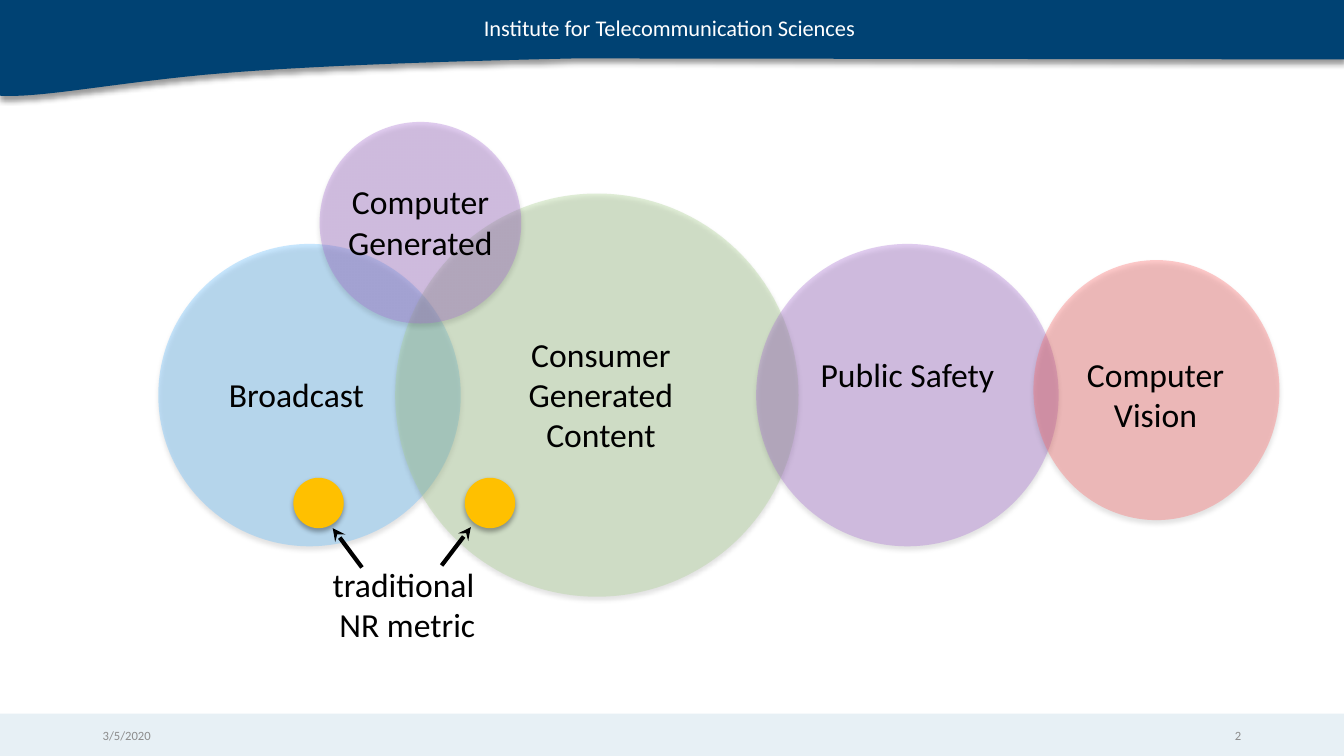
"""Build a slide of overlapping video content domains and traditional metrics."""
from lxml import etree
from pptx import Presentation
from pptx.dml.color import RGBColor
from pptx.enum.shapes import MSO_CONNECTOR, MSO_SHAPE
from pptx.enum.text import MSO_ANCHOR, PP_ALIGN
from pptx.oxml.ns import qn
from pptx.util import Inches, Pt

LEFT, CENTER, RIGHT = PP_ALIGN.LEFT, PP_ALIGN.CENTER, PP_ALIGN.RIGHT
TOP, MIDDLE = MSO_ANCHOR.TOP, MSO_ANCHOR.MIDDLE
RECTANGLE, OVAL = MSO_SHAPE.RECTANGLE, MSO_SHAPE.OVAL

FOOTER_BAND = (0, 7.08, 13.33, 0.42)
BANNER_CORNERS = [(0, 0), (13.35, -0.02), (13.34, 0.59), (5.7, 0.58)]
BANNER_CURVES = [
    [(5.7, 0.58), (4.34, 0.61), (2.79, 0.66), (1.85, 0.76)],
    [(1.85, 0.76), (0.91, 0.86), (0.38, 0.97), (0, 0.95)],
]
CURVE_STEPS = 16

DOMAIN_CIRCLES = [
    ((1.57, 2.42, 3, 3), "61BCFF"),
    ((3.92, 1.92, 4, 4), "A9D18E"),
    ((7.5, 2.42, 3, 3), "A86ED4"),
    ((3.17, 1.21, 2, 2), "A86ED4"),
    ((10.25, 2.58, 2.44, 2.58), "FF6666"),
]
DOMAIN_OPACITY = 34
METRIC_DOTS = [(2.91, 4.74, 0.5, 0.5), (4.61, 4.74, 0.5, 0.5)]
METRIC_ARROWS = [((3.59, 5.63), (3.3, 5.24)), ((4.38, 5.61), (4.67, 5.23))]

LABEL_WIDTH = 1.92
LABELS = [
    ("traditional \vNR metric", 3.08, 5.54, 0.91),
    ("Consumer Generated Content", 5, 3.26, 1.31),
    ("Broadcast", 1.98, 3.66, 0.5),
    ("Public Safety", 8.04, 3.46, 0.91),
    ("Computer Generated", 3.21, 1.75, 0.91),
    ("Computer\vVision", 10.5, 3.46, 0.91),
]
MARGIN_TEXTS = [
    ("Institute for Telecommunication Sciences", (4.7, 0.09, 3.93, 0.37),
     16, "FFFFFF", LEFT, TOP, False),
    ("3/5/2020", (0.92, 7.1, 3, 0.4), 9, "8C8C8C", LEFT, MIDDLE, True),
    ("2", (9.41, 7.1, 3, 0.4), 9, "8C8C8C", RIGHT, MIDDLE, True),
]


def color(hex_value):
    return RGBColor.from_string(hex_value)


def add_color(parent, hex_value, opacity):
    element = etree.SubElement(parent, qn("a:srgbClr"), val=hex_value)
    etree.SubElement(element, qn("a:alpha"), val=str(opacity * 1000))


def paint(shape, fill, opacity=100, shadow=None):
    shape.shadow.inherit = False
    shape.line.fill.background()
    shape.fill.solid()
    shape.fill.fore_color.rgb = color(fill)
    properties = shape._element.spPr
    if opacity < 100:
        solid = properties.find(qn("a:solidFill"))
        solid.remove(solid[0])
        add_color(solid, fill, opacity)
    if shadow:
        strength, blur, distance = shadow
        outer = etree.SubElement(
            properties.find(qn("a:effectLst")), qn("a:outerShdw"),
            blurRad=str(Pt(blur)), dist=str(Pt(distance)),
            dir="5400000", rotWithShape="0")
        add_color(outer, "000000", strength)


def add_preset(slide, kind, box, fill, opacity=100, shadow=None):
    shape = slide.shapes.add_shape(kind, *map(Inches, box))
    paint(shape, fill, opacity, shadow)


def curve_point(points, t):
    weights = ((1 - t) ** 3, 3 * t * (1 - t) ** 2, 3 * t ** 2 * (1 - t), t ** 3)
    return tuple(sum(w * p[axis] for w, p in zip(weights, points)) for axis in (0, 1))


def add_banner(slide):
    outline = BANNER_CORNERS + [
        curve_point(curve, step / CURVE_STEPS)
        for curve in BANNER_CURVES for step in range(1, CURVE_STEPS + 1)]
    points = [(Inches(x), Inches(y)) for x, y in outline]
    builder = slide.shapes.build_freeform(*points[0])
    builder.add_line_segments(points[1:], close=True)
    paint(builder.convert_to_shape(), "004273", shadow=(40, 4, 3))


def add_text(slide, text, box, size, text_color, alignment, anchor, wrap):
    frame = slide.shapes.add_textbox(*map(Inches, box)).text_frame
    frame.word_wrap = wrap
    frame.vertical_anchor = anchor
    frame.text = text
    paragraph = frame.paragraphs[0]
    paragraph.alignment = alignment
    for run in paragraph.runs:
        for name, value in {"name": "Calibri", "size": Pt(size)}.items():
            setattr(run.font, name, value)
        run.font.color.rgb = color(text_color)


def add_arrow(slide, start, end):
    arrow = slide.shapes.add_connector(
        MSO_CONNECTOR.STRAIGHT, *map(Inches, start + end))
    arrow.line.width = Pt(3)
    arrow.line.color.rgb = color("000000")
    etree.SubElement(arrow.line._get_or_add_ln(), qn("a:tailEnd"), type="stealth")
    etree.SubElement(arrow._element.spPr, qn("a:effectLst"))


def main():
    presentation = Presentation()
    presentation.slide_width = Inches(13.33)
    presentation.slide_height = Inches(7.5)
    slide = presentation.slides.add_slide(presentation.slide_layouts[6])

    add_preset(slide, RECTANGLE, FOOTER_BAND, "E7F0F5")
    add_banner(slide)
    for margin_text in MARGIN_TEXTS:
        add_text(slide, *margin_text)

    circle_shadow = (32, 3.5, 2.2)
    for box, fill in DOMAIN_CIRCLES:
        add_preset(slide, OVAL, box, fill, DOMAIN_OPACITY, circle_shadow)
    for box in METRIC_DOTS:
        add_preset(slide, OVAL, box, "FFC000", shadow=circle_shadow)
    for text, left, top, height in LABELS:
        box = (left, top, LABEL_WIDTH, height)
        add_text(slide, text, box, 24, "000000", CENTER, TOP, True)
    for start, end in METRIC_ARROWS:
        add_arrow(slide, start, end)

    presentation.save("out.pptx")


if __name__ == "__main__":
    main()
